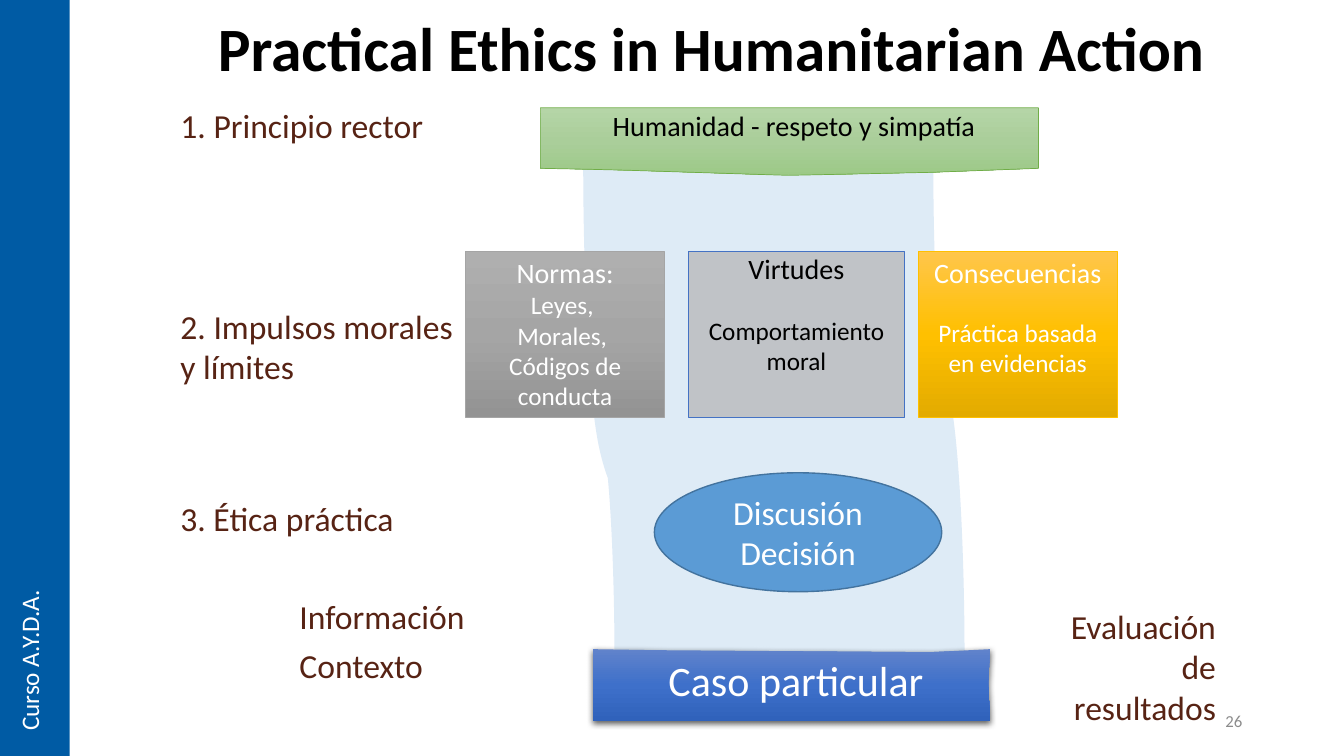
import copy

import pptx
import pptx.dml.color
import pptx.enum.shapes
import pptx.enum.text
import pptx.oxml
import pptx.oxml.ns
import pptx.util

SCALE = 9144  # EMU per px, 100 px to the inch
FONT = "Calibri"
WHITE, BLACK, BROWN = "FFFFFF", "000000", "572314"
SHAPES = pptx.enum.shapes.MSO_SHAPE
ALIGN = pptx.enum.text.PP_ALIGN
ANCHOR = pptx.enum.text.MSO_ANCHOR


def px(*lengths):
    return [pptx.util.Emu(length * SCALE) for length in lengths]


def colour(hex_code):
    return pptx.dml.color.RGBColor.from_string(hex_code)


def add_xml(parent, tag, **attributes):
    child = pptx.oxml.parse_xml(f"<a:{tag} {pptx.oxml.ns.nsdecls('a')}/>")
    for name, value in attributes.items():
        child.set(name, str(value))
    parent.append(child)
    return child


def set_alpha(element, percent):
    solid = element.find(pptx.oxml.ns.qn("a:solidFill"))
    add_xml(solid[0], "alpha", val=percent * 1000)


# Text
def write(shape, lines, align=ALIGN.CENTER, anchor=ANCHOR.TOP, inset=(10, 5, 10, 5)):
    """Each line is (text, size, hex colour) and optionally the space before it."""
    frame = shape.text_frame
    frame.word_wrap = True
    frame.vertical_anchor = anchor
    (frame.margin_left, frame.margin_top,
     frame.margin_right, frame.margin_bottom) = px(*inset)
    for index, (text, size, hex_code, *space) in enumerate(lines):
        para = frame.add_paragraph() if index else frame.paragraphs[0]
        para.alignment = align
        if space:
            para.space_before = pptx.util.Pt(space[0])
        span = para.add_run()
        span.text = text
        span.font.name = FONT
        span.font.size = pptx.util.Pt(size)
        span.font.color.rgb = colour(hex_code)
    return frame


def add_text(page, place, lines, **layout):
    box = page.shapes.add_textbox(*px(*place))
    return write(box, lines, **layout)


def add_label(page, place, text, align=ALIGN.LEFT):
    add_text(page, place, [(text, 24, BROWN)], align=align, inset=(8, 0, 8, 0))


# Shapes
def paint(shape, fill, line=None, width=0.5):
    """A single hex colour fills solid, three make a downward gradient."""
    shape.shadow.inherit = False
    if isinstance(fill, str):
        shape.fill.solid()
        shape.fill.fore_color.rgb = colour(fill)
    else:
        shape.fill.gradient()
        shape.fill.gradient_angle = 270
        stops = shape._element.spPr.find(".//" + pptx.oxml.ns.qn("a:gsLst"))
        stops.append(copy.deepcopy(stops[0]))
        for stop, position, hex_code in zip(shape.fill.gradient_stops, (0, 0.5, 1), fill):
            stop.position = position
            stop.color.rgb = colour(hex_code)
    if line:
        shape.line.color.rgb = colour(line)
        shape.line.width = pptx.util.Pt(width)
    else:
        shape.line.fill.background()
    return shape


def add_preset(page, kind, place, fill, line=None, width=0.5):
    return paint(page.shapes.add_shape(kind, *px(*place)), fill, line, width)


def add_outline(page, points, fill, line=None):
    builder = page.shapes.build_freeform(*points[0], scale=SCALE)
    builder.add_line_segments(points[1:], close=True)
    return paint(builder.convert_to_shape(), fill, line)


def indent(frame):
    frame.paragraphs[0]._p.get_or_add_pPr().set("marL", str(9 * SCALE))


def add_band(page):
    """Wide translucent S-curve that runs from top to bottom behind the boxes."""
    curve = pptx.enum.shapes.MSO_CONNECTOR.CURVE
    band = page.shapes.add_connector(curve, *px(1012, 391, 523, 422))
    properties = band._element.spPr
    properties.find(pptx.oxml.ns.qn("a:xfrm")).set("rot", "16200000")
    geometry = properties.find(pptx.oxml.ns.qn("a:prstGeom"))
    guides = geometry.find(pptx.oxml.ns.qn("a:avLst"))
    if guides is None:
        guides = add_xml(geometry, "avLst")
    add_xml(guides, "gd", name="adj1", fmla="val 52000")
    band.line.color.rgb = colour("5B9BD5")
    band.line.width = pptx.util.Pt(250)
    set_alpha(properties.find(pptx.oxml.ns.qn("a:ln")), 20)
    add_xml(properties, "effectLst")


def add_title(page, text):
    title = page.shapes.title
    title.left, title.top, title.width, title.height = px(206, 13, 1157, 76)
    frame = write(title, [(text, 44, BLACK)], align=ALIGN.LEFT, anchor=ANCHOR.MIDDLE)
    frame.auto_size = pptx.enum.text.MSO_AUTO_SIZE.NONE
    frame.paragraphs[0].line_spacing = 0.9
    frame.paragraphs[0].runs[0].font.bold = True


def add_sidebar(page):
    add_preset(page, SHAPES.RECTANGLE, (0, 0, 69, 750), "005BA4")
    frame = add_text(page, (9, 581, 50, 154), [("Curso A.Y.D.A.", 18, WHITE)],
                     align=ALIGN.LEFT)
    frame.word_wrap = False
    frame._txBody.bodyPr.set("vert", "vert270")


def add_impulses(page):
    top, height = 249, 165
    norms = add_preset(page, SHAPES.RECTANGLE, (462, top, 197, height),
                       ("AFAFAF", "A5A5A5", "939393"), "A5A5A5")
    write(norms, [("Normas:", 20, WHITE)] + [
        (text, 18, WHITE) for text in ("Leyes, ", "Morales, ", "Códigos de conducta")])

    outcomes = add_preset(page, SHAPES.RECTANGLE, (911, top, 197, height),
                          ("FFC64B", "FFC000", "E3AB00"), "FFC000")
    write(outcomes, [("Consecuencias", 20, WHITE),
                     ("Práctica basada en evidencias", 18, WHITE, 19.5)])

    virtues = add_preset(page, SHAPES.RECTANGLE, (683, top, 214, height),
                         "AFABAB", "4472C4")
    set_alpha(virtues._element.spPr, 62)
    write(virtues, [("Virtudes", 20, BLACK), ("Comportamiento moral", 18, BLACK, 22)],
          inset=(10, 0, 10, 5))


def add_case(page):
    case = add_outline(page, [(588, 644), (649, 645), (923, 647), (982, 644), (980, 678),
                              (982, 715), (588, 715), (588, 676)],
                       ("6183CB", "3E70CA", "3062BB"))
    effects = case._element.spPr.find(pptx.oxml.ns.qn("a:effectLst"))
    shadow = add_xml(effects, "outerShdw", blurRad=57150, dist=19050, dir=5400000,
                     algn="ctr", rotWithShape=0)
    add_xml(add_xml(shadow, "srgbClr", val=BLACK), "alpha", val=63000)
    indent(write(case, [("Caso particular", 30, WHITE, 6)]))


def add_principle(page):
    principle = add_outline(page, [(536, 107), (1030, 107), (1030, 167), (924, 171),
                                   (782, 174), (624, 169), (585, 168), (536, 167)],
                            ("B5D5A7", "AACE9A", "9CC987"), "70AD47")
    frame = write(principle, [("Humanidad - respeto y simpatía", 20, BLACK, 10)])
    frame.paragraphs[0].line_spacing = 0.9
    indent(frame)


def main():
    deck = pptx.Presentation()
    deck.slide_width, deck.slide_height = px(1333, 750)
    page = deck.slides.add_slide(deck.slide_layouts[5])

    # Frame of the page
    add_text(page, (942, 695, 300, 40), [("26", 12, "8C8C8C")],
             align=ALIGN.RIGHT, anchor=ANCHOR.MIDDLE)
    add_sidebar(page)
    add_title(page, "Practical Ethics in Humanitarian Action")

    # Diagram, back to front
    add_band(page)
    add_impulses(page)
    add_case(page)
    add_principle(page)
    decision = add_preset(page, SHAPES.OVAL, (649, 469, 285, 118), "5B9BD5", "43739E", 1)
    write(decision, [("Discusión", 24, WHITE), ("Decisión", 24, WHITE)],
          anchor=ANCHOR.MIDDLE)

    # Labels beside the diagram
    add_label(page, (171, 104, 285, 40), "1. Principio rector")
    add_label(page, (171, 303, 298, 81), "2. Impulsos morales y límites")
    add_label(page, (171, 494, 387, 40), "3. Ética práctica")
    add_label(page, (289, 591, 221, 40), "Información")
    add_label(page, (289, 640, 276, 40), "Contexto")
    add_label(page, (1037, 601, 177, 121), "Evaluación de resultados", ALIGN.RIGHT)

    deck.save("out.pptx")


if __name__ == "__main__":
    main()
